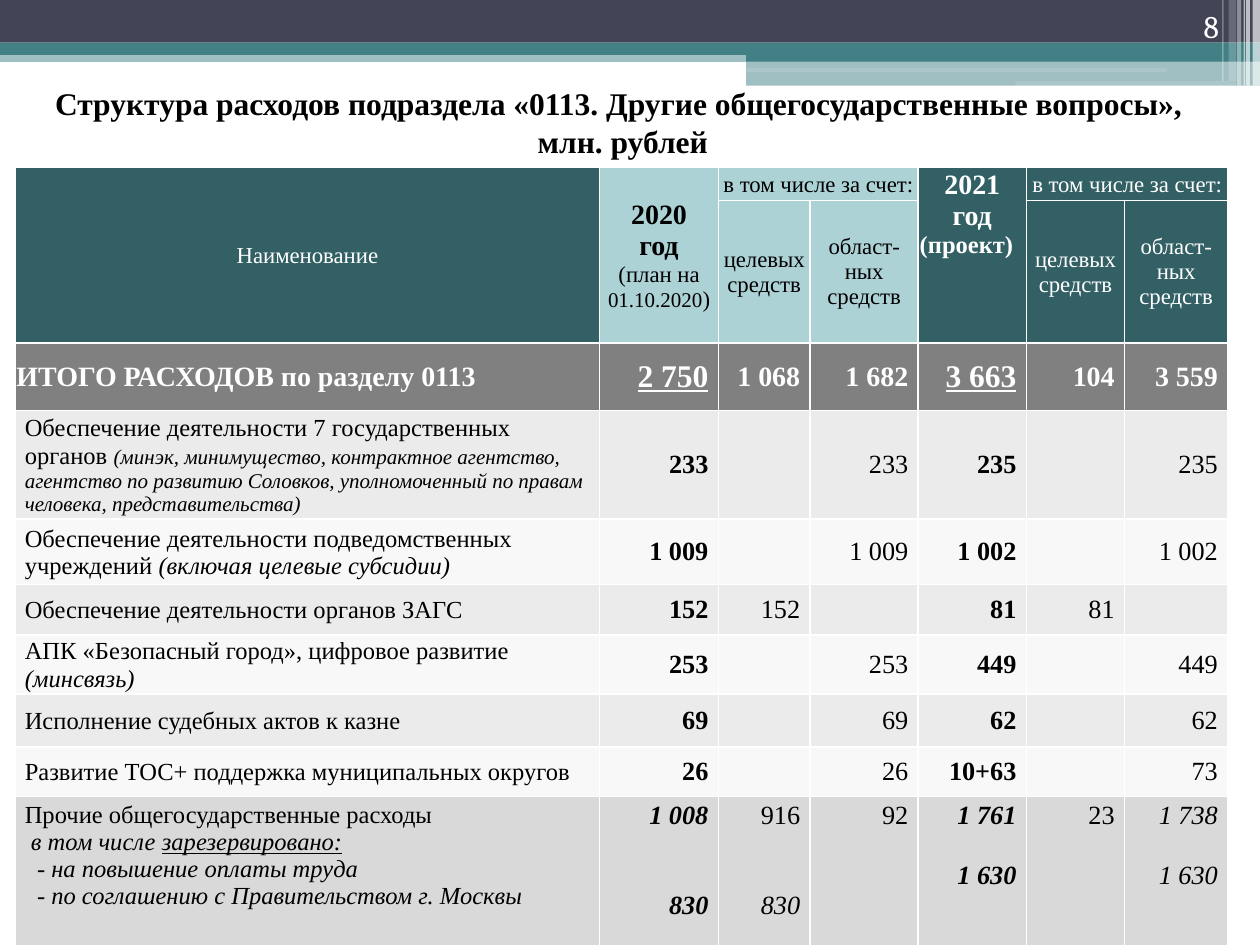
"""Build the slide on the expenditure structure of subsection 0113."""
import typing

import lxml.etree
import pptx
import pptx.dml.color
import pptx.enum.shapes
import pptx.enum.text
import pptx.oxml.ns
import pptx.util

Cm = pptx.util.Cm
Pt = pptx.util.Pt
RGBColor = pptx.dml.color.RGBColor
Align = pptx.enum.text.PP_ALIGN
Anchor = pptx.enum.text.MSO_ANCHOR
Shape = pptx.enum.shapes.MSO_SHAPE

WHITE = RGBColor(0xFF, 0xFF, 0xFF)
BLACK = RGBColor(0x00, 0x00, 0x00)
NAVY = RGBColor(0x42, 0x44, 0x56)
TEAL = RGBColor(0x43, 0x80, 0x86)
DARK_TEAL = RGBColor(0x32, 0x60, 0x65)
PALE_TEAL = RGBColor(0xAD, 0xD2, 0xD6)
TOTAL_GREY = RGBColor(0x80, 0x80, 0x80)
ODD_GREY = RGBColor(0xD9, 0xD9, 0xD9)
EVEN_GREY = RGBColor(0xF2, 0xF2, 0xF2)

SERIF = "Times New Roman"
COLUMN_WIDTHS = [11.79, 2.39, 1.85, 2.18, 2.18, 1.98, 2.08]
ROW_HEIGHTS = [0.66, 2.87, 1.37, 2.18, 1.32, 1.02, 1.19, 1.07, 1.0, 3.0]
HEADER_INSETS = (0.03, 0.03, 0.03, 0)
LABEL_INSETS = (0.2, 0.03, 0.03, 0)
VALUE_INSETS = (0, 0, 0.2, 0)


class Run(typing.NamedTuple):
    """A stretch of text; style holds letters from b, i and u."""
    text: str
    size: float
    style: str = ""


class Line(typing.NamedTuple):
    """A paragraph with its runs, space before and indent in points."""
    runs: list
    align: Align = Align.LEFT
    before: float = 0
    indent: float = 0


def line(text, size, style="", align=Align.LEFT, before=0, indent=0):
    return Line([Run(text, size, style)], align, before, indent)


def centred(text, size, style=""):
    return line(text, size, style, Align.CENTER)


def figure(text, size, style="", before=0):
    return line(text, size, style, Align.RIGHT, before)


BODY_ROWS = [
    ([Run("Обеспечение деятельности 7 государственных органов ", 14),
      Run("(минэк, минимущество, контрактное агентство, агентство по развитию Соловков, "
          "уполномоченный по правам человека, представительства)", 12, "i")],
     ["233", "", "233", "235", "", "235"]),
    ([Run("Обеспечение деятельности подведомственных учреждений ", 14),
      Run("(включая целевые субсидии)", 14, "i")],
     ["1 009", "", "1 009", "1 002", "", "1 002"]),
    ([Run("Обеспечение деятельности органов ЗАГС", 14)],
     ["152", "152", "", "81", "81", ""]),
    ([Run("АПК «Безопасный город», цифровое развитие ", 14), Run("(минсвязь)", 14, "i")],
     ["253", "", "253", "449", "", "449"]),
    ([Run("Исполнение судебных актов к казне", 14)],
     ["69", "", "69", "62", "", "62"]),
    ([Run("Развитие ТОС+ поддержка муниципальных округов", 14)],
     ["26", "", "26", "10+63", "", "73"]),
]
OTHER_LABEL = [
    line("Прочие общегосударственные расходы", 14),
    Line([Run("в том числе ", 14, "i"), Run("зарезервировано:", 14, "iu")], indent=3.5),
    line("- на повышение оплаты труда", 14, "i", indent=7),
    line("- по соглашению с Правительством г. Москвы", 14, "i", indent=7),
]
OTHER_FIGURES = [
    [figure("1 008", 15, "bi"), figure("830", 15, "bi", 34.5)],
    [figure("916", 15), figure("830", 15, "i", 34.5)],
    [figure("92", 15)],
    [figure("1 761", 15, "bi"), figure("1 630", 15, "bi", 17.25)],
    [figure("23", 15)],
    [figure("1 738", 15, "i"), figure("1 630", 15, "i", 17.25)],
]


def set_font(font, size, style):
    font.size = Pt(size)
    font.bold = "b" in style
    font.italic = "i" in style
    font.underline = "u" in style


def write_lines(frame, lines, colour, face=SERIF):
    """Fill a text frame, with fonts on runs only where they differ."""
    for index, item in enumerate(lines):
        paragraph = frame.add_paragraph() if index else frame.paragraphs[0]
        paragraph.alignment = item.align
        paragraph.space_before = Pt(item.before)
        paragraph.font.name = face
        paragraph.font.color.rgb = colour
        set_font(paragraph.font, *item.runs[0][1:])
        if item.indent:
            paragraph._p.get_or_add_pPr().set("marL", str(Pt(item.indent)))
        for part in item.runs:
            run = paragraph.add_run()
            run.text = part.text
            if part[1:] != item.runs[0][1:]:
                set_font(run.font, *part[1:])


def paint(fill, colour, opacity=100):
    fill.solid()
    fill.fore_color.rgb = colour
    if opacity < 100:
        tag = pptx.oxml.ns.qn("a:alpha")
        solid = fill._xPr.find(pptx.oxml.ns.qn("a:solidFill"))
        lxml.etree.SubElement(solid[0], tag, val=str(opacity * 1000))


def add_bar(slide, left, top, width, height, colour, opacity=100, kind=Shape.RECTANGLE):
    bar = slide.shapes.add_shape(kind, Cm(left), Cm(top), Cm(width), Cm(height))
    bar.shadow.inherit = False
    bar.line.fill.background()
    paint(bar.fill, colour, opacity)


def add_banner(slide):
    add_bar(slide, 0, 1.02, 25.4, 0.23, TEAL, 50)
    add_bar(slide, 0, 0, 25.4, 0.86, NAVY)
    add_bar(slide, 0, 0.86, 25.4, 0.25, TEAL)
    add_bar(slide, 15.04, 0.99, 10.36, 0.25, TEAL)
    add_bar(slide, 15.04, 1.22, 10.36, 0.51, TEAL, 50)
    add_bar(slide, 15.01, 1.37, 8.51, 0.08, WHITE, 11, Shape.ROUNDED_RECTANGLE)
    add_bar(slide, 20.47, 1.63, 4.45, 0.1, WHITE, 11, Shape.ROUNDED_RECTANGLE)
    for left, width, height, opacity in [
            (25.25, 0.15, 1.73, 65), (25.12, 0.08, 1.73, 65), (25.07, 0.03, 1.73, 60),
            (24.94, 0.08, 1.73, 40), (24.77, 0.15, 1.63, 20), (24.64, 0.03, 1.63, 30)]:
        add_bar(slide, left, 0, width, height, WHITE, opacity)


def add_borders(cell):
    """Draw thin white borders; call before the cell is filled."""
    properties = cell._tc.get_or_add_tcPr()
    for side in ("a:lnL", "a:lnR", "a:lnT", "a:lnB"):
        border = lxml.etree.SubElement(properties, pptx.oxml.ns.qn(side), w=str(Pt(1)))
        solid = lxml.etree.SubElement(border, pptx.oxml.ns.qn("a:solidFill"))
        lxml.etree.SubElement(solid, pptx.oxml.ns.qn("a:srgbClr"), val=str(WHITE))


def fill_cell(cell, lines, colour, fill, insets, opacity=100, anchor=Anchor.MIDDLE):
    paint(cell.fill, fill, opacity)
    cell.vertical_anchor = anchor
    cell.margin_left, cell.margin_top, cell.margin_right, cell.margin_bottom = map(Cm, insets)
    write_lines(cell.text_frame, lines, colour)


def fill_header(table):
    def head(row, column, lines, colour, fill, rows=1, columns=1, anchor=Anchor.MIDDLE):
        cell = table.cell(row, column)
        if rows * columns > 1:
            cell.merge(table.cell(row + rows - 1, column + columns - 1))
        fill_cell(cell, lines, colour, fill, HEADER_INSETS, anchor=anchor)

    plan = [centred("2020", 16, "b"), centred("год", 16, "b"),
            Line([Run("(план на ", 13), Run("01.10.2020", 12), Run(")", 13)], Align.CENTER)]
    project = [centred("2021", 16, "b"), centred("год", 16, "b"), line("(проект)", 14, "b")]
    head(0, 0, [centred("Наименование", 13)], WHITE, DARK_TEAL, rows=2)
    for column, year, colour, fill, anchor in [
            (1, plan, BLACK, PALE_TEAL, Anchor.MIDDLE),
            (4, project, WHITE, DARK_TEAL, Anchor.TOP)]:
        head(0, column, year, colour, fill, rows=2, anchor=anchor)
        head(0, column + 1, [centred("в том числе за счет:", 13)], colour, fill, columns=2)
        head(1, column + 1, [centred("целевых средств", 13)], colour, fill)
        head(1, column + 2, [centred("област-ных средств", 13)], colour, fill)


def fill_total(table):
    fill_cell(table.cell(2, 0), [line("ИТОГО РАСХОДОВ по разделу 0113", 16, "b")],
              WHITE, TOTAL_GREY, HEADER_INSETS)
    for column, value in enumerate(["2 750", "1 068", "1 682", "3 663", "104", "3 559"], 1):
        size, style = (18, "bu") if column in (1, 4) else (16, "b")
        fill_cell(table.cell(2, column), [figure(value, size, style)],
                  WHITE, TOTAL_GREY, VALUE_INSETS)


def fill_body(table):
    for row, (label, values) in enumerate(BODY_ROWS, 3):
        fill = ODD_GREY if row % 2 else EVEN_GREY
        fill_cell(table.cell(row, 0), [Line(label)], BLACK, fill, LABEL_INSETS, 50)
        for column, value in enumerate(values, 1):
            lines = [figure(value, 15, "b" if column in (1, 4) else "")] if value else []
            fill_cell(table.cell(row, column), lines, BLACK, fill, VALUE_INSETS, 50)
    fill_cell(table.cell(9, 0), OTHER_LABEL, BLACK, ODD_GREY, (0.2, 0.1, 0.03, 0),
              anchor=Anchor.TOP)
    for column, lines in enumerate(OTHER_FIGURES, 1):
        fill_cell(table.cell(9, column), lines, BLACK, ODD_GREY, (0, 0.1, 0.2, 0),
                  anchor=Anchor.TOP)


def add_expenditure_table(slide):
    table = slide.shapes.add_table(
        len(ROW_HEIGHTS), len(COLUMN_WIDTHS), Cm(0.3), Cm(3.38),
        Cm(sum(COLUMN_WIDTHS)), Cm(sum(ROW_HEIGHTS))).table
    table.first_row = table.horz_banding = False
    for column, width in zip(table.columns, COLUMN_WIDTHS):
        column.width = Cm(width)
    for row, height in zip(table.rows, ROW_HEIGHTS):
        row.height = Cm(height)
    for cell in table.iter_cells():
        add_borders(cell)
    fill_header(table)
    fill_total(table)
    fill_body(table)


def format_title(slide):
    title = slide.shapes.title
    title.left, title.top, title.width, title.height = Cm(-0.64), Cm(1.57), Cm(26.39), Cm(1.8)
    title.text_frame.auto_size = pptx.enum.text.MSO_AUTO_SIZE.NONE
    title.text_frame.vertical_anchor = Anchor.TOP
    write_lines(title.text_frame, [
        centred("Структура расходов подраздела «0113. Другие общегосударственные вопросы», ",
                18, "b"),
        centred("млн. рублей", 18, "b")], BLACK)


def add_page_number(slide):
    frame = slide.shapes.add_textbox(Cm(22.71), Cm(0), Cm(2.11), Cm(1.02)).text_frame
    frame.word_wrap = True
    frame.vertical_anchor = Anchor.BOTTOM
    write_lines(frame, [figure("8", 18)], WHITE, "Cambria")


def main():
    deck = pptx.Presentation()
    deck.slide_width, deck.slide_height = Cm(25.4), Cm(19.05)
    slide = deck.slides.add_slide(deck.slide_layouts[5])
    add_banner(slide)
    add_expenditure_table(slide)
    format_title(slide)
    add_page_number(slide)
    deck.save("out.pptx")


if __name__ == "__main__":
    main()
